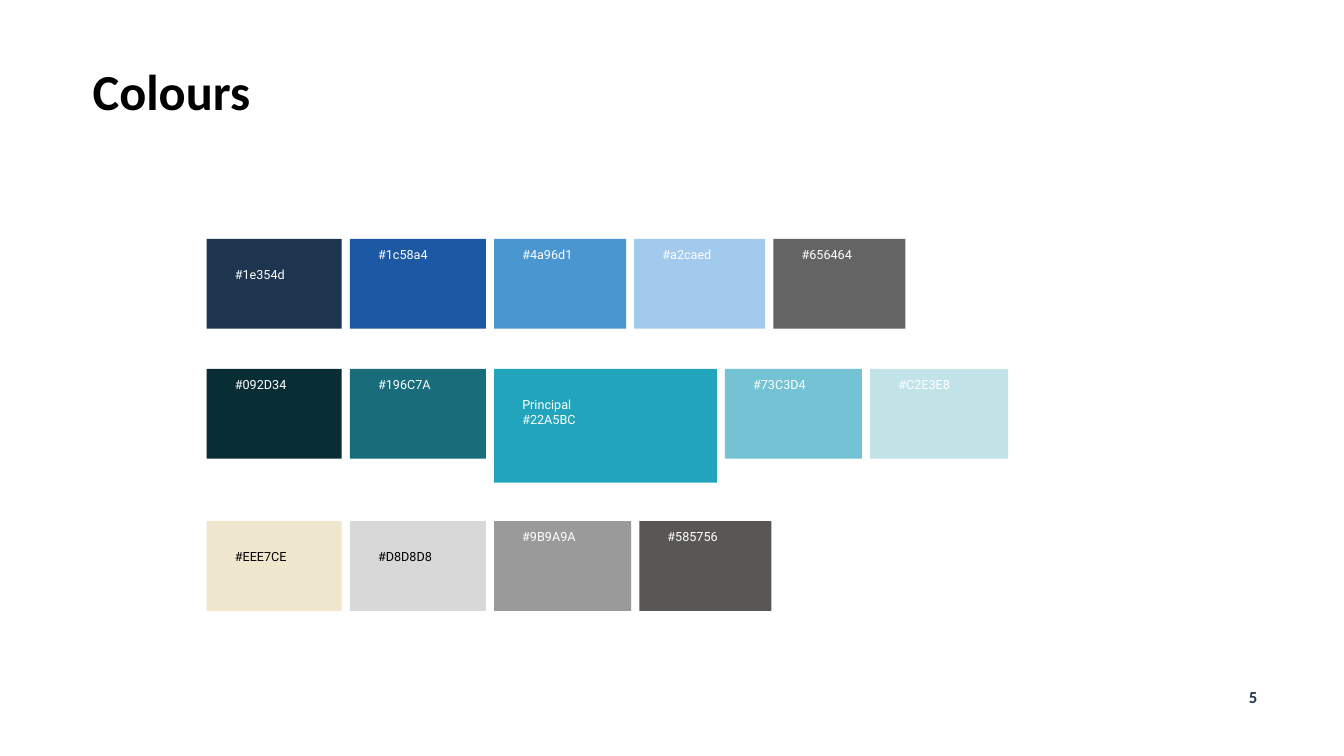
from dataclasses import dataclass

from pptx import Presentation
from pptx.dml.color import RGBColor
from pptx.enum.shapes import MSO_SHAPE as SHAPE
from pptx.enum.text import MSO_ANCHOR as ANCHOR, PP_ALIGN as ALIGN
from pptx.util import Emu, Pt


@dataclass(frozen=True)
class Theme:
    black: str = "000000"
    white: str = "FFFFFF"
    navy: str = "1D344D"
    heading_font: str = "Calibri"
    label_font: str = "Roboto"
    title_size: int = 36
    number_size: int = 12
    label_size: int = 9


theme = Theme()


def px(n):
    """Turn px, 100 to the inch, into EMU."""
    return Emu(n * 9144)


def style(p, font, size, color, bold=False):
    for r in p.runs:
        r.font.name = font
        r.font.size = Pt(size)
        r.font.bold = bold
        r.font.color.rgb = RGBColor.from_string(color)


prs = Presentation()
prs.slide_width, prs.slide_height = px(1333), px(750)
s = prs.slides.add_slide(prs.slide_layouts[6])

# Title and slide number
headings = [
    ("Colours", (82, 62, 791, 65), theme.title_size, theme.black, ALIGN.LEFT, 0.9),
    ("5", (1193, 676, 100, 30), theme.number_size, theme.navy, ALIGN.CENTER, 1.0),
]
for text, box, size, color, align, spacing in headings:
    tf = s.shapes.add_textbox(*map(px, box)).text_frame
    tf.word_wrap = True
    tf.text = text
    p = tf.paragraphs[0]
    p.alignment = align
    p.line_spacing = spacing
    style(p, theme.heading_font, size, color, bold=True)

# Swatches: each row runs from the left edge with equal gaps
LEFT, GAP, HEIGHT, TALL = 205, 8, 89, 113
INSET, HIGH, LOW = 28, 8, 28  # side inset, then the two label heights
WHITE, BLACK = theme.white, theme.black
rows = [
    (237, [
        ("#1e354d", "1D354E", 134, HEIGHT, LOW, WHITE),
        ("#1c58a4", "1C58A4", 135, HEIGHT, HIGH, WHITE),
        ("#4a96d1", "4A96D1", 131, HEIGHT, HIGH, WHITE),
        ("#a2caed", "A2CAED", 130, HEIGHT, HIGH, WHITE),
        ("#656464", "656464", 131, HEIGHT, HIGH, WHITE),
    ]),
    (366, [
        ("#092D34", "092D34", 134, HEIGHT, HIGH, WHITE),
        ("#196C7A", "196C7A", 135, HEIGHT, HIGH, WHITE),
        ("Principal\n#22A5BC", "22A5BC", 221, TALL, LOW, WHITE),
        ("#73C3D4", "73C3D4", 136, HEIGHT, HIGH, WHITE),
        ("#C2E3E8", "C2E3E8", 137, HEIGHT, HIGH, WHITE),
    ]),
    (517, [
        ("#EEE7CE", "EEE7CE", 134, HEIGHT, LOW, BLACK),
        ("#D8D8D8", "D8D8D8", 135, HEIGHT, LOW, BLACK),
        ("#9B9A9A", "9B9A9A", 136, HEIGHT, HIGH, WHITE),
        ("#585756", "585756", 131, HEIGHT, HIGH, WHITE),
    ]),
]
for top, swatches in rows:
    left = LEFT
    for label, fill, width, height, label_top, color in swatches:
        sp = s.shapes.add_shape(SHAPE.RECTANGLE, px(left), px(top), px(width), px(height))
        sp.shadow.inherit = False
        sp.fill.solid()
        sp.fill.fore_color.rgb = RGBColor.from_string(fill)
        sp.line.fill.background()
        tf = sp.text_frame
        tf.margin_left = tf.margin_right = px(INSET)
        tf.margin_top, tf.margin_bottom = px(label_top), px(0)
        tf.vertical_anchor = ANCHOR.TOP
        tf.word_wrap = True
        tf.text = label
        for p in tf.paragraphs:
            p.alignment = ALIGN.LEFT
            style(p, theme.label_font, theme.label_size, color)
        left += width + GAP

prs.save("out.pptx")
